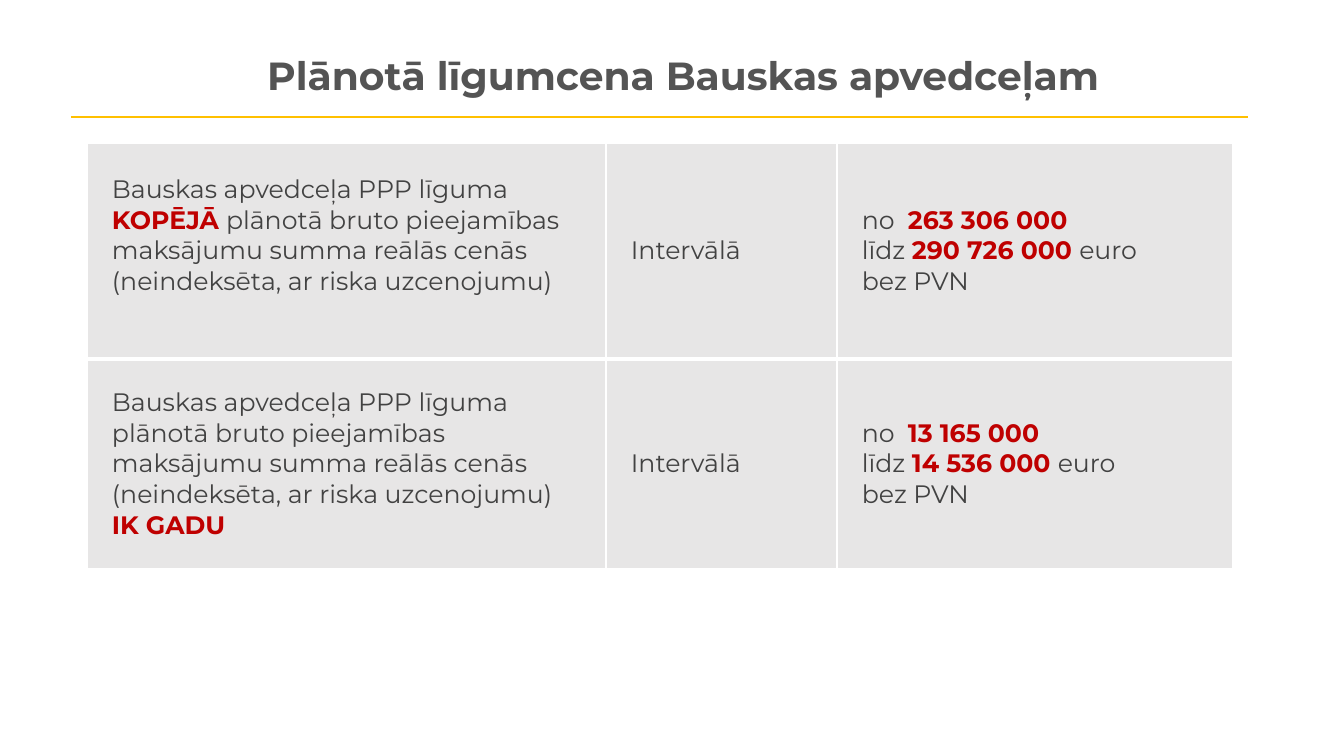
from dataclasses import dataclass

from lxml import etree
from pptx import Presentation, util as u
from pptx.dml.color import RGBColor
from pptx.enum import shapes, text
from pptx.oxml.ns import qn


@dataclass(frozen=True)
class Theme:
    font: str = "Montserrat"
    title: str = "545454"
    body: str = "424242"
    accent: str = "BF0000"
    rule: str = "FFC000"
    cell: str = "E7E6E6"
    border: str = "FFFFFF"
    title_size: int = 28
    body_size: int = 18


THEME = Theme()
EMU_PER_PX = 914400 / 100.8
COLS = (519, 231, 396)
ROWS = (216, 210)
INSET, INDENT = 5, 20

# Text between asterisks is emphasised; each string is a paragraph
PRICES = (
    (["Bauskas apvedceļa PPP līguma *KOPĒJĀ *plānotā bruto pieejamības "
      "maksājumu summa reālās cenās (neindeksēta, ar riska uzcenojumu)"],
     ["Intervālā"],
     ["no  *263 306 000*", "līdz *290 726 000 *euro", "bez PVN"]),
    (["Bauskas apvedceļa PPP līguma plānotā bruto pieejamības "
      "maksājumu summa reālās cenās (neindeksēta, ar riska uzcenojumu)",
      "*IK GADU*"],
     ["Intervālā"],
     ["no  *13 165 000*", "līdz *14 536 000 *euro", "bez PVN"]),
)


def px(n):
    return u.Emu(round(n * EMU_PER_PX))


def style(font, size, color, bold):
    font.name, font.size, font.bold = THEME.font, u.Pt(size), bold
    font.color.rgb = RGBColor.from_string(color)


def add_heading(slide, x, y, w, h):
    # Title
    sp = slide.shapes.title
    sp.left, sp.top, sp.width, sp.height = map(px, (x, y, w, h))
    tf = sp.text_frame
    tf.text = "Plānotā līgumcena Bauskas apvedceļam"
    tf.auto_size = text.MSO_AUTO_SIZE.NONE
    tf.vertical_anchor = text.MSO_ANCHOR.MIDDLE
    p = tf.paragraphs[0]
    p.alignment, p.line_spacing = text.PP_ALIGN.CENTER, 0.9
    style(p.runs[0].font, THEME.title_size, THEME.title, True)

    # Rule along the lower edge of the title
    rule = slide.shapes.add_connector(
        shapes.MSO_CONNECTOR.STRAIGHT,
        px(x + 16), px(y + h), px(x + 1193), px(y + h))
    rule.line.color.rgb = RGBColor.from_string(THEME.rule)
    rule.line.width = u.Pt(2)
    etree.SubElement(rule._element.spPr, qn("a:effectLst"))


def set_borders(cell, bottom):
    tc_pr = cell._tc.get_or_add_tcPr()
    for side, width in (("L", 1), ("R", 1), ("T", 1), ("B", bottom)):
        ln = etree.SubElement(tc_pr, qn(f"a:ln{side}"), w=str(u.Pt(width)))
        fill = etree.SubElement(ln, qn("a:solidFill"))
        etree.SubElement(fill, qn("a:srgbClr"), val=THEME.border)


def fill_cell(cell, paragraphs, bottom):
    set_borders(cell, bottom)
    cell.fill.solid()
    cell.fill.fore_color.rgb = RGBColor.from_string(THEME.cell)
    cell.vertical_anchor = text.MSO_ANCHOR.MIDDLE
    cell.margin_left = cell.margin_right = px(INSET)
    cell.margin_top = cell.margin_bottom = px(INSET)
    tf = cell.text_frame
    for i, line in enumerate(paragraphs):
        p = tf.add_paragraph() if i else tf.paragraphs[0]
        p._p.get_or_add_pPr().set("marL", str(px(INDENT)))
        for j, part in enumerate(line.split("*")):
            if part:
                r = p.add_run()
                r.text = part
                strong = j % 2 == 1
                style(r.font, THEME.body_size,
                      THEME.accent if strong else THEME.body, strong)


def add_price_table(slide, x, y):
    table = slide.shapes.add_table(
        len(ROWS), len(COLS), px(x), px(y), px(sum(COLS)), px(sum(ROWS))).table
    table.first_row = table.horz_banding = False
    for col, width in zip(table.columns, COLS):
        col.width = px(width)
    for i, (height, entries) in enumerate(zip(ROWS, PRICES)):
        table.rows[i].height = px(height)
        for j, paragraphs in enumerate(entries):
            fill_cell(table.cell(i, j), paragraphs, bottom=1 if i else 3)
    # The total's description sits half a line above the middle
    table.cell(0, 0).margin_bottom = px(INSET + 31)


def main():
    prs = Presentation()
    prs.slide_width, prs.slide_height = px(1344), px(756)
    slide = prs.slides.add_slide(prs.slide_layouts[5])
    add_price_table(slide, 87, 143)
    add_heading(slide, 55, 38, 1256, 79)
    prs.save("out.pptx")


if __name__ == "__main__":
    main()
